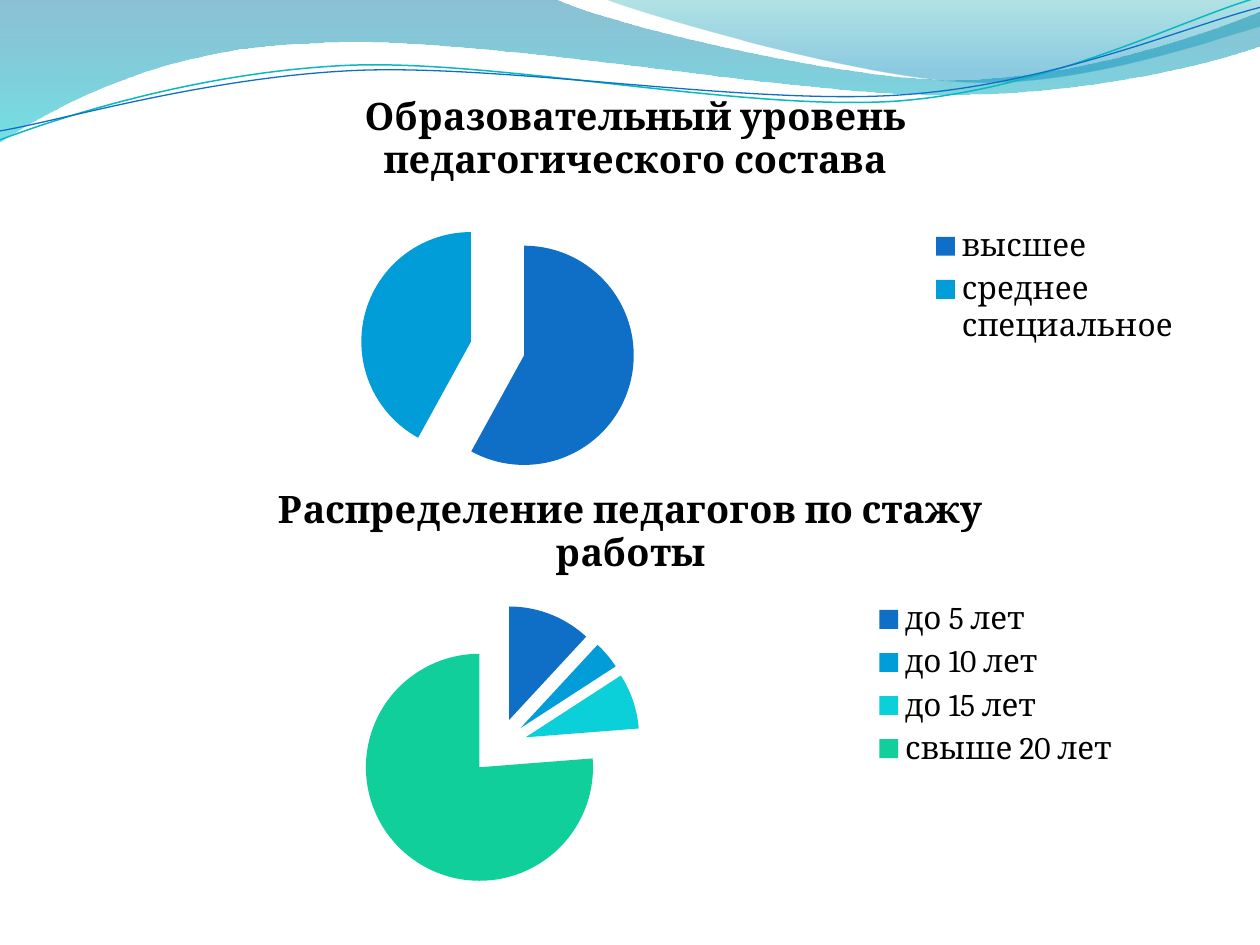
from lxml.etree import SubElement
from pptx import Presentation
from pptx.chart.data import CategoryChartData
from pptx.dml.color import RGBColor
from pptx.enum.chart import XL_CHART_TYPE as ChartType, XL_LEGEND_POSITION as LegendPos
from pptx.oxml import parse_xml
from pptx.oxml.ns import nsdecls, qn
from pptx.util import Cm, Pt

FONT = "Cambria"
BLACK = RGBColor(0x00, 0x00, 0x00)
BLUE = RGBColor(0x0F, 0x6F, 0xC6)
SKY = RGBColor(0x00, 0x9D, 0xD9)
CYAN = RGBColor(0x0B, 0xD0, 0xD9)
GREEN = RGBColor(0x10, 0xCF, 0x9B)
TEAL_LINE = RGBColor(0x0A, 0xB8, 0xBF)
WAVE_TOP = RGBColor(0x00, 0x74, 0xA1)
WAVE_BOTTOM = RGBColor(0x00, 0xC6, 0xCF)
CREST_TOP = RGBColor(0x00, 0xA1, 0xA9)
CREST_BOTTOM = RGBColor(0x00, 0x8B, 0xBF)
SLICE_COLORS = [BLUE, SKY, CYAN, GREEN]
CURVE_TILT = 357.3

WAVE = [
    [(0, 0)],
    [(11.18, -0.03)],
    [(12.09, 0.43), (16.87, 1.6), (19.25, 1.6)],
    [(21.67, 1.6), (24.33, 0.66), (25.4, 0.23)],
    [(25.43, 0.91)],
    [(24.97, 1.12), (22.1, 1.93), (18.95, 1.91)],
    [(15.8, 1.91), (9.7, 0.71), (6.53, 0.86)],
    [(3.28, 0.91), (1.17, 2.11), (-0.03, 2.87)],
    [(0, 0)],
]
CREST = [
    [(12.17, -0.03)],
    [(12.93, 0.28), (17.32, 1.57), (19.53, 1.65)],
    [(21.74, 1.75), (24.41, 0.81), (25.4, 0.53)],
    [(25.4, 0)],
    [(12.17, -0.03)],
]
TEAL_CURVE = [
    [(-0.05, 2.22)],
    [(1.19, 1.82), (4.02, 1.04), (7.05, 1.05)],
    [(10.05, 1.07), (15.02, 2.37), (18.08, 2.29)],
    [(21.13, 2.2), (23.87, 0.91), (25.41, 0.55)],
]
BLUE_CURVE = [
    [(-0.04, 2.04)],
    [(1.16, 1.9), (4.18, 1.15), (7.2, 1.16)],
    [(10.25, 1.18), (15.13, 2.25), (18.18, 2.17)],
    [(21.21, 2.1), (23.93, 1.06), (25.45, 0.75)],
]


def add_outline(slide, segments, close):
    """Add a freeform of lines and cubic curves without shadow."""
    first, *rest = [(Cm(x), Cm(y)) for seg in segments for x, y in seg]
    builder = slide.shapes.build_freeform(*first)
    builder.add_line_segments(rest, close=close)
    s = builder.convert_to_shape()
    s.shadow.inherit = False
    steps = iter(list(s._element.iter(qn("a:lnTo"))))
    for seg in segments[1:]:
        step = next(steps)
        if len(seg) == 3:
            step.tag = qn("a:cubicBezTo")
            for _ in range(2):
                extra = next(steps)
                step.append(extra[0])
                extra.getparent().remove(extra)
    return s


def add_wave(slide, segments, stops):
    """Add a wave filled from top to bottom with a translucent gradient."""
    s = add_outline(slide, segments, True)
    s.line.fill.background()
    s.fill.gradient()
    s.fill.gradient_angle = 270
    for stop, (position, color, _) in zip(s.fill.gradient_stops, stops):
        stop.position = position
        stop.color.rgb = color
    for clr, (_, _, opacity) in zip(s._element.spPr.iter(qn("a:srgbClr")), stops):
        SubElement(clr, qn("a:alpha"), val=str(opacity * 1000))


def add_curve(slide, segments, color, width):
    """Add a thin, slightly tilted open curve."""
    s = add_outline(slide, segments, False)
    s.rotation = CURVE_TILT
    s.fill.background()
    s.line.color.rgb = color
    s.line.width = Pt(width)


def format_font(font, size, bold=False, color=BLACK):
    """Set the face, size, weight and colour of a font."""
    font.name = FONT
    font.size = Pt(size)
    font.bold = bold
    font.color.rgb = color


def write_text(tf, text, **fmt):
    """Write one formatted run into a text frame."""
    r = tf.paragraphs[0].add_run()
    r.text = text
    format_font(r.font, **fmt)


def add_pie(slide, title, values, left, top, width, height):
    """Add an exploded pie chart with a title and a legend on the right."""
    data = CategoryChartData()
    data.categories = list(values)
    data.add_series(title, list(values.values()))
    chart = slide.shapes.add_chart(ChartType.PIE, Cm(left), Cm(top),
                                   Cm(width), Cm(height), data).chart
    format_font(chart.font, size=18)
    chart.has_title = True
    write_text(chart.chart_title.text_frame, title, size=21.6, bold=True)
    chart.chart_title.include_in_layout = False
    chart.has_legend = True
    chart.legend.position = LegendPos.RIGHT
    chart.legend.include_in_layout = False
    format_font(chart.legend.font, size=18)
    plot = chart.plots[0]
    plot.vary_by_categories = True
    series = plot.series[0]
    series._element.find(qn("c:tx")).addnext(
        parse_xml(f'<c:explosion {nsdecls("c")} val="25"/>'))
    for i, color in enumerate(SLICE_COLORS[:len(values)]):
        fill = series.points[i].format.fill
        fill.solid()
        fill.fore_color.rgb = color


def main():
    """Build the slide and save it."""
    prs = Presentation()
    prs.slide_width, prs.slide_height = Cm(25.4), Cm(19.05)
    slide = prs.slides.add_slide(prs.slide_layouts[6])
    add_wave(slide, WAVE, [(0, WAVE_TOP, 45), (1, WAVE_BOTTOM, 55)])
    add_wave(slide, CREST, [(0, CREST_TOP, 30), (0.8, CREST_BOTTOM, 45)])
    add_curve(slide, TEAL_CURVE, TEAL_LINE, 0.85)
    add_curve(slide, BLUE_CURVE, BLUE, 0.75)
    add_pie(slide, "Образовательный уровень педагогического состава",
            {"высшее ": 58, "среднее специальное ": 42},
            1.4, 1.4, 22.81, 8.74)
    add_pie(slide, "Распределение педагогов по стажу работы",
            {"до 5 лет": 12, "до 10 лет": 4, "до 15 лет": 8, "свыше 20 лет": 77},
            2.59, 9.32, 20.24, 8.94)
    prs.save("out.pptx")


if __name__ == "__main__":
    main()
